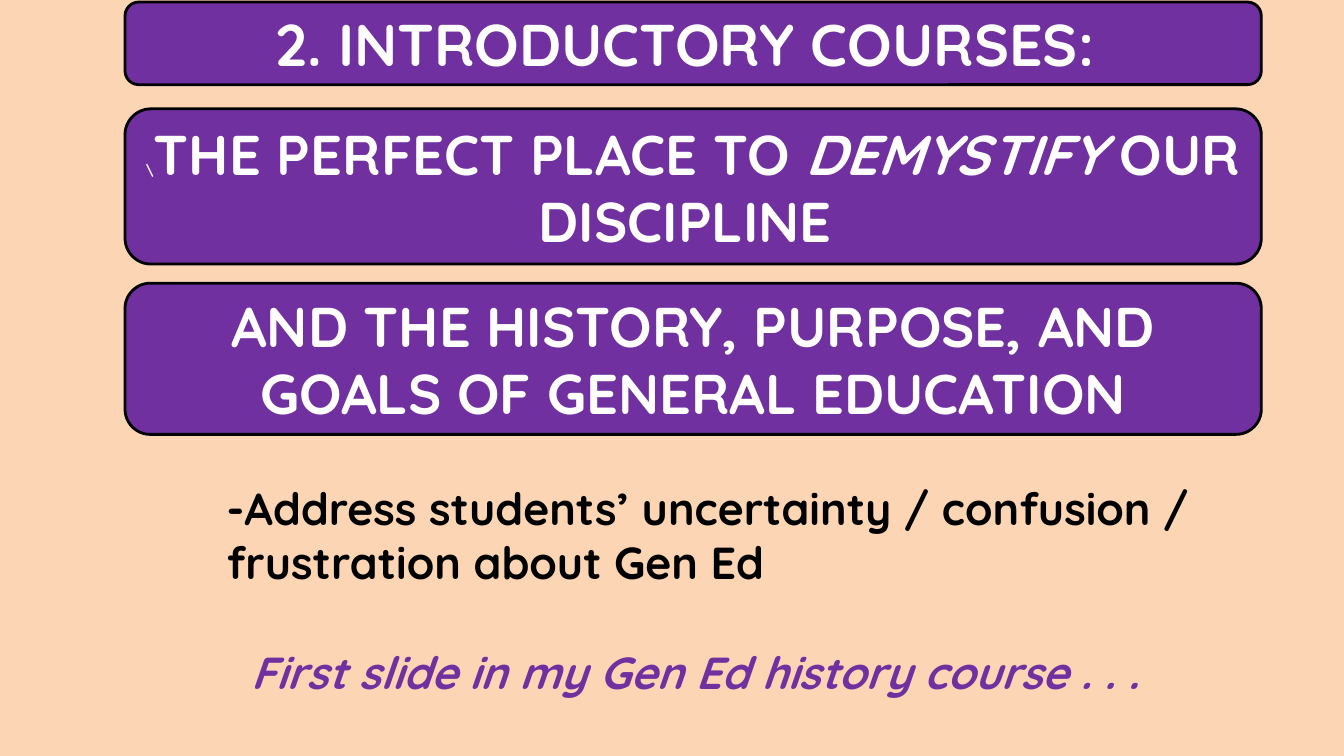
import pptx
import pptx.dml.color
import pptx.enum.shapes
import pptx.enum.text
import pptx.util

RGBColor = pptx.dml.color.RGBColor
Inches, Pt = pptx.util.Inches, pptx.util.Pt
ALIGN = pptx.enum.text.PP_ALIGN
ANCHOR = pptx.enum.text.MSO_ANCHOR

PEACH = RGBColor(0xFC, 0xD5, 0xB5)
PURPLE = RGBColor(0x70, 0x30, 0xA0)
WHITE = RGBColor(0xFF, 0xFF, 0xFF)
BLACK = RGBColor(0x00, 0x00, 0x00)
FONT = "Quicksand"

SLIDE_WIDTH, SLIDE_HEIGHT = 13.33, 7.5
BANNER_LEFT, BANNER_WIDTH = 1.24, 11.27
NOTES_BOX = (2.15, 4.72, 10.03, 2.26)
NOTES_SIZE = 32
CLOSING_GAP, CLOSING_INDENT = 40, 0.24

BANNERS = [
    {"top": 0.02, "height": 0.82,
     "runs": [("2. INTRODUCTORY COURSES: ", {"size": 42})]},
    {"top": 1.08, "height": 1.54,
     "runs": [("\\", {"size": 10}),
              ("THE PERFECT PLACE TO ", {"size": 40}),
              ("DEMYSTIFY ", {"size": 40, "italic": True}),
              ("OUR DISCIPLINE ", {"size": 40})]},
    {"top": 2.81, "height": 1.5,
     "runs": [("AND THE HISTORY, PURPOSE, AND GOALS OF GENERAL EDUCATION",
               {"size": 40})]},
]
ADVICE = "-Address students’ uncertainty / confusion / frustration about Gen Ed"
CLOSING = "First slide in my Gen Ed history course . . ."


def add_text(paragraph, text, size, color, italic=False):
    run = paragraph.add_run()
    run.text = text
    run.font.name = FONT
    run.font.size = Pt(size)
    run.font.bold = True
    run.font.italic = italic
    run.font.color.rgb = color


def add_banner(slide, top, height, runs):
    banner = slide.shapes.add_shape(
        pptx.enum.shapes.MSO_SHAPE.ROUNDED_RECTANGLE,
        Inches(BANNER_LEFT), Inches(top), Inches(BANNER_WIDTH), Inches(height))
    banner.shadow.inherit = False
    banner.fill.solid()
    banner.fill.fore_color.rgb = PURPLE
    banner.line.color.rgb = BLACK
    banner.line.width = Pt(2)
    frame = banner.text_frame
    frame.word_wrap = True
    frame.vertical_anchor = ANCHOR.MIDDLE
    heading = frame.paragraphs[0]
    heading.alignment = ALIGN.CENTER
    for text, style in runs:
        add_text(heading, text, color=WHITE, **style)


def add_notes(slide):
    frame = slide.shapes.add_textbox(*map(Inches, NOTES_BOX)).text_frame
    frame.word_wrap = True
    frame.auto_size = pptx.enum.text.MSO_AUTO_SIZE.SHAPE_TO_FIT_TEXT
    add_text(frame.paragraphs[0], ADVICE, size=NOTES_SIZE, color=BLACK)
    closing = frame.add_paragraph()
    closing.space_before = Pt(CLOSING_GAP)
    closing._p.get_or_add_pPr().set("marL", str(Inches(CLOSING_INDENT)))
    add_text(closing, CLOSING, size=NOTES_SIZE, color=PURPLE, italic=True)


def main():
    """Build the introductory courses slide."""
    deck = pptx.Presentation()
    deck.slide_width = Inches(SLIDE_WIDTH)
    deck.slide_height = Inches(SLIDE_HEIGHT)
    slide = deck.slides.add_slide(deck.slide_layouts[6])
    slide.background.fill.solid()
    slide.background.fill.fore_color.rgb = PEACH
    for banner in BANNERS:
        add_banner(slide, **banner)
    add_notes(slide)
    deck.save("out.pptx")


if __name__ == "__main__":
    main()
